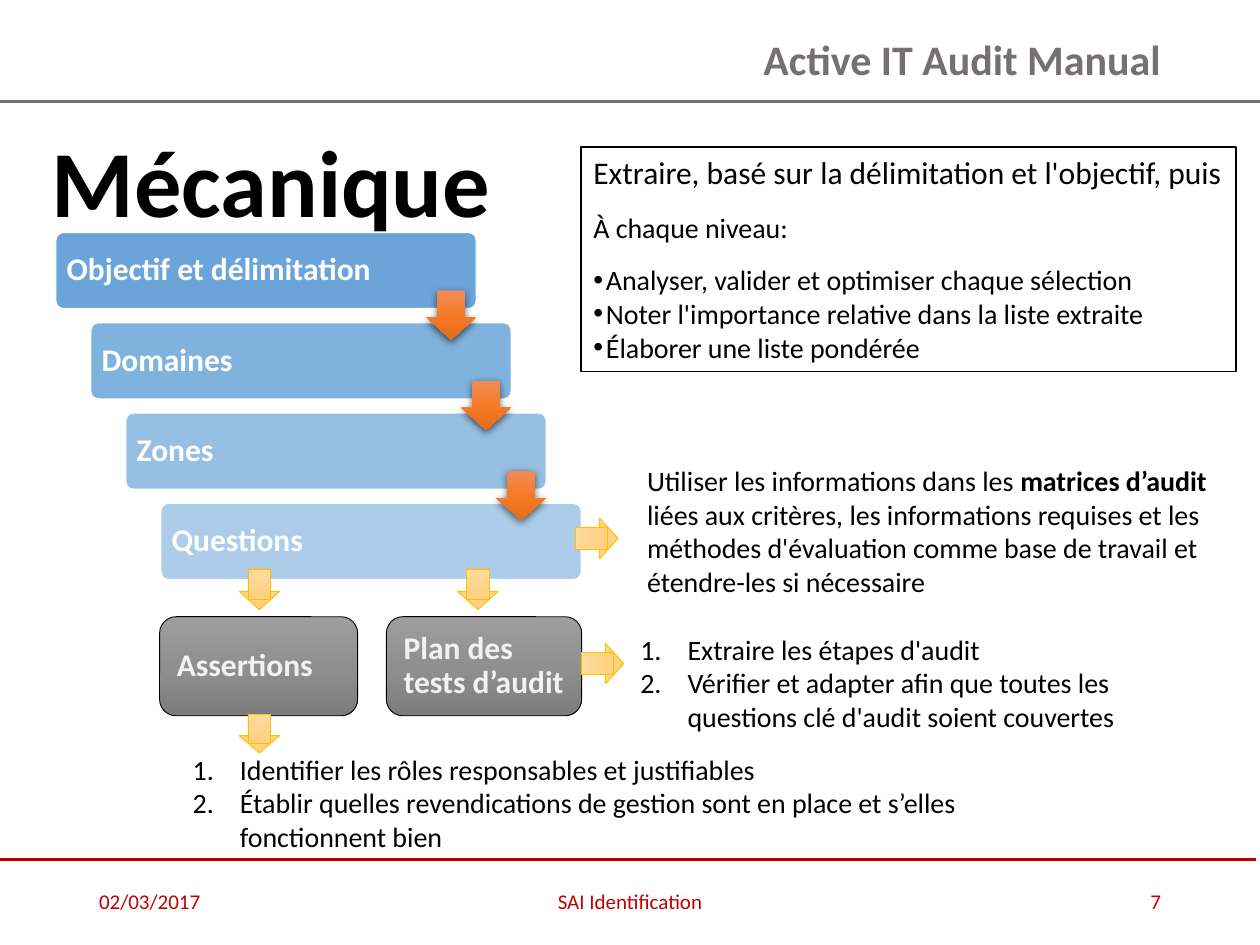
from dataclasses import dataclass

from lxml import etree
from pptx import Presentation
from pptx import util as u
from pptx.dml.color import RGBColor
from pptx.enum import shapes, text
from pptx.oxml import ns

KIND = shapes.MSO_SHAPE
ALIGN = text.PP_ALIGN
MIDDLE = text.MSO_ANCHOR.MIDDLE


@dataclass(frozen=True)
class Theme:
    """Colours and type sizes of the slide."""
    font: str = "Calibri"
    black: str = "000000"
    white: str = "FFFFFF"
    pale: str = "F2F2F2"
    grey: str = "767171"
    red: str = "C00000"
    blue: str = "5B9BD5"
    gold: str = "FFC000"
    orange_blend: tuple = ("F18C57", "F67B28", "E56C19")
    gold_blend: tuple = ("FFDB9E", "FFD590", "FFD07C")
    grey_blend: tuple = ("9D9D9D", "909090", "7C7C7C")
    title: int = 54
    header: int = 24
    label: int = 18
    body: int = 16
    footer: int = 12


def add_element(parent, tag, **attributes):
    """Append a DrawingML element and return it."""
    element = etree.SubElement(parent, ns.qn(tag))
    for name, value in attributes.items():
        element.set(name, str(value))
    return element


class Painter:
    """Draws styled elements on the current page."""

    def __init__(self, page, theme):
        self.page = page
        self.theme = theme

    def fill_text(self, box, paragraphs, size, color, bold=False, align=None, anchor=None,
                  spacing=None, wrap=True, grow=False, inset=None):
        """Fill a box with (runs, options) paragraphs, each run a (words, bold) pair."""
        frame = box.text_frame
        frame.word_wrap = wrap
        frame.vertical_anchor = anchor or text.MSO_ANCHOR.TOP
        if grow:
            frame.auto_size = text.MSO_AUTO_SIZE.SHAPE_TO_FIT_TEXT
        if inset is not None:
            frame.margin_left = frame.margin_right = u.Pt(inset)
            frame.margin_top = frame.margin_bottom = u.Pt(inset)
        for index, (runs, options) in enumerate(paragraphs):
            para = frame.add_paragraph() if index else frame.paragraphs[0]
            para.alignment = align or ALIGN.LEFT
            if spacing:
                para.line_spacing = spacing
            if "before" in options:
                para.space_before = u.Pt(options["before"])
            if "mark" in options:
                self.mark(para, options["mark"], options["indent"])
            for words, strong in runs:
                span = para.add_run()
                span.text = words
                span.font.name = self.theme.font
                span.font.size = u.Pt(options.get("size", size))
                span.font.bold = bold or strong
                span.font.color.rgb = RGBColor.from_string(color)

    def mark(self, para, mark, indent):
        """Give a paragraph a hanging bullet or automatic number."""
        properties = para._p.get_or_add_pPr()
        properties.set("marL", str(u.Pt(indent)))
        properties.set("indent", str(-u.Pt(indent)))
        if mark == "number":
            add_element(properties, "a:buFont", typeface="+mj-lt")
            add_element(properties, "a:buAutoNum", type="arabicPeriod")
        else:
            add_element(properties, "a:buFont", typeface="Arial")
            add_element(properties, "a:buChar", char=mark)

    def text(self, place, paragraphs, size, color, **style):
        """Add a text box."""
        box = self.page.shapes.add_textbox(*map(u.Pt, place))
        self.fill_text(box, paragraphs, size, color, **style)

    def shape(self, kind, place, fill, line=None, width=0.5, adjust=(), turn=0, alpha=None):
        """Add a preset shape with a plain or three-step vertical fill."""
        shape = self.page.shapes.add_shape(kind, *map(u.Pt, place))
        shape.shadow.inherit = False
        shape.rotation = turn
        for index, value in enumerate(adjust):
            shape.adjustments[index] = value
        if isinstance(fill, tuple):
            shape.fill.gradient()
            shape.fill.gradient_angle = 270
            stops = shape._element.spPr.find(".//" + ns.qn("a:gsLst"))
            for stop in list(stops):
                stops.remove(stop)
            for index, color in enumerate(fill):
                stop = add_element(stops, "a:gs", pos=index * 50000)
                add_element(stop, "a:srgbClr", val=color)
        else:
            shape.fill.solid()
            shape.fill.fore_color.rgb = RGBColor.from_string(fill)
            if alpha is not None:
                color = shape._element.spPr.find(".//" + ns.qn("a:srgbClr"))
                add_element(color, "a:alpha", val=round(alpha * 1000))
        if line:
            shape.line.color.rgb = RGBColor.from_string(line)
            shape.line.width = u.Pt(width)
        else:
            shape.line.fill.background()
        return shape

    def rule(self, left, top, color):
        """Add a page-wide horizontal line."""
        line = self.page.shapes.add_connector(
            shapes.MSO_CONNECTOR.STRAIGHT, *map(u.Pt, (left, top, left + 720, top)))
        line.line.color.rgb = RGBColor.from_string(color)
        line.line.width = u.Pt(1.5)
        add_element(line._element.spPr, "a:effectLst")

    def step_arrow(self, left, top):
        """Add an orange arrow with a soft shadow."""
        arrow = self.shape(KIND.DOWN_ARROW, (left, top, 28.2, 28.2),
                           self.theme.orange_blend, adjust=(0.55, 0.45))
        effects = arrow._element.spPr.find(ns.qn("a:effectLst"))
        shadow = add_element(effects, "a:outerShdw", blurRad=u.Pt(4.5), dist=u.Pt(1.5),
                             dir=5400000, algn="ctr", rotWithShape=0)
        color = add_element(shadow, "a:srgbClr", val=self.theme.black)
        add_element(color, "a:alpha", val=63000)

    def result_arrow(self, left, top, height, right=False):
        """Add a gold arrow whose stem is boxed, pointing down or right."""
        theme, width, turn = self.theme, 23.2, 270 if right else 0
        self.shape(KIND.DOWN_ARROW, (left, top, width, height), theme.gold_blend,
                   theme.gold, adjust=(0.55, 0.45), turn=turn)
        stem_width, stem_height = 0.55 * width, 0.75 * height
        slack = (height - stem_height) / 2
        stem_left = left + (width - stem_width) / 2 - (slack if right else 0)
        stem_top = top + (slack if right else 0)
        self.shape(KIND.RECTANGLE, (stem_left, stem_top, stem_width, stem_height),
                   theme.gold_blend, theme.gold, turn=turn)


def plain(words, **options):
    """Return a paragraph of one regular run."""
    return [(words, False)], options


def listed(mark, indent, *items):
    """Return paragraphs sharing one list mark."""
    return [plain(item, mark=mark, indent=indent) for item in items]


def main():
    """Build the slide and save it."""
    deck = Presentation()
    deck.slide_width, deck.slide_height = u.Pt(720), u.Pt(540)
    page = deck.slides.add_slide(deck.slide_layouts[6])
    theme = Theme()
    draw = Painter(page, theme)

    draw.text((303, 12.3, 367.5, 46), [plain("Active IT Audit Manual")], theme.header,
              theme.grey, bold=True, align=ALIGN.RIGHT, anchor=MIDDLE, spacing=0.9)
    draw.rule(0, 58, theme.grey)
    draw.rule(-2, 491, theme.red)
    for left, width, words, align in ((49.5, 162, "02/03/2017", ALIGN.LEFT),
                                      (238.5, 243, "SAI Identification", ALIGN.CENTER),
                                      (508.5, 162, "7", ALIGN.RIGHT)):
        draw.text((left, 500.5, width, 28.75), [plain(words)], theme.footer, theme.red,
                  align=align, anchor=MIDDLE)
    draw.text((22.5, 67, 268, 72.7), [plain("Mécanique")], theme.title, theme.black,
              bold=True, wrap=False, grow=True)

    levels = ("Objectif et délimitation", "Domaines", "Zones", "Questions")
    for index, words in enumerate(levels):
        left, top = 31.8 + 20 * index, 132.7 + 51.6 * index
        draw.shape(KIND.ROUNDED_RECTANGLE, (left, top, 240.5, 43.8), theme.blue, theme.white,
                   width=1, adjust=(0.1,), alpha=90 - 40 * index / 3)
        draw.text((left + 1.3, top + 1.3, 189.4, 41.2), [plain(words)], theme.label,
                  theme.white, bold=True, anchor=MIDDLE, spacing=0.9, inset=5)
    for index in range(len(levels) - 1):
        draw.step_arrow(243.7 + 20 * index, 165.9 + 51.6 * index)

    advice = draw.shape(KIND.RECTANGLE, (332, 84, 374.5, 128.4), theme.white, theme.black,
                        width=1)
    points = listed("•", 7.2, "Analyser, valider et optimiser chaque sélection",
                    "Noter l'importance relative dans la liste extraite",
                    "Élaborer une liste pondérée")
    points[0][1]["before"] = 11
    draw.fill_text(advice, [
        plain("Extraire, basé sur la délimitation et l'objectif, puis", size=theme.label),
        plain("À chaque niveau:", before=11), *points],
        theme.body, theme.black, grow=True)

    for left, width, words in ((91.2, 113.2, "Assertions"),
                               (220.8, 111.6, "Plan des tests d’audit")):
        card = draw.shape(KIND.ROUNDED_RECTANGLE, (left, 352.4, width, 56.6),
                          theme.grey_blend, theme.black)
        draw.fill_text(card, [plain(words)], theme.label, theme.pale, bold=True,
                       anchor=MIDDLE, spacing=0.9)

    draw.text((103, 426.2, 493.2, 65.4), listed(
        "number", 27, "Identifier les rôles responsables et justifiables",
        "Établir quelles revendications de gestion sont en place et s’elles "
        "fonctionnent bien"), theme.body, theme.black, grow=True)
    draw.text((358.8, 357.8, 347.8, 65.4), listed(
        "number", 27, "Extraire les étapes d'audit",
        "Vérifier et adapter afin que toutes les questions clé d'audit soient couvertes"),
        theme.body, theme.black, grow=True)
    draw.text((362.7, 261.4, 357, 84.8), [([
        ("Utiliser les informations dans les ", False), ("matrices d’audit ", True),
        ("liées aux critères, les informations requises et les méthodes d'évaluation "
         "comme base de travail et étendre-les si nécessaire", False)], {})],
        theme.body, theme.black, grow=True)

    for left, top, height, right in ((136.7, 325.2, 23.2, False), (261.5, 325.2, 23.2, False),
                                     (136.7, 408.3, 21.9, False), (332.8, 367.2, 24, True),
                                     (329.5, 295.7, 24, True)):
        draw.result_arrow(left, top, height, right)

    deck.save("out.pptx")


if __name__ == "__main__":
    main()
